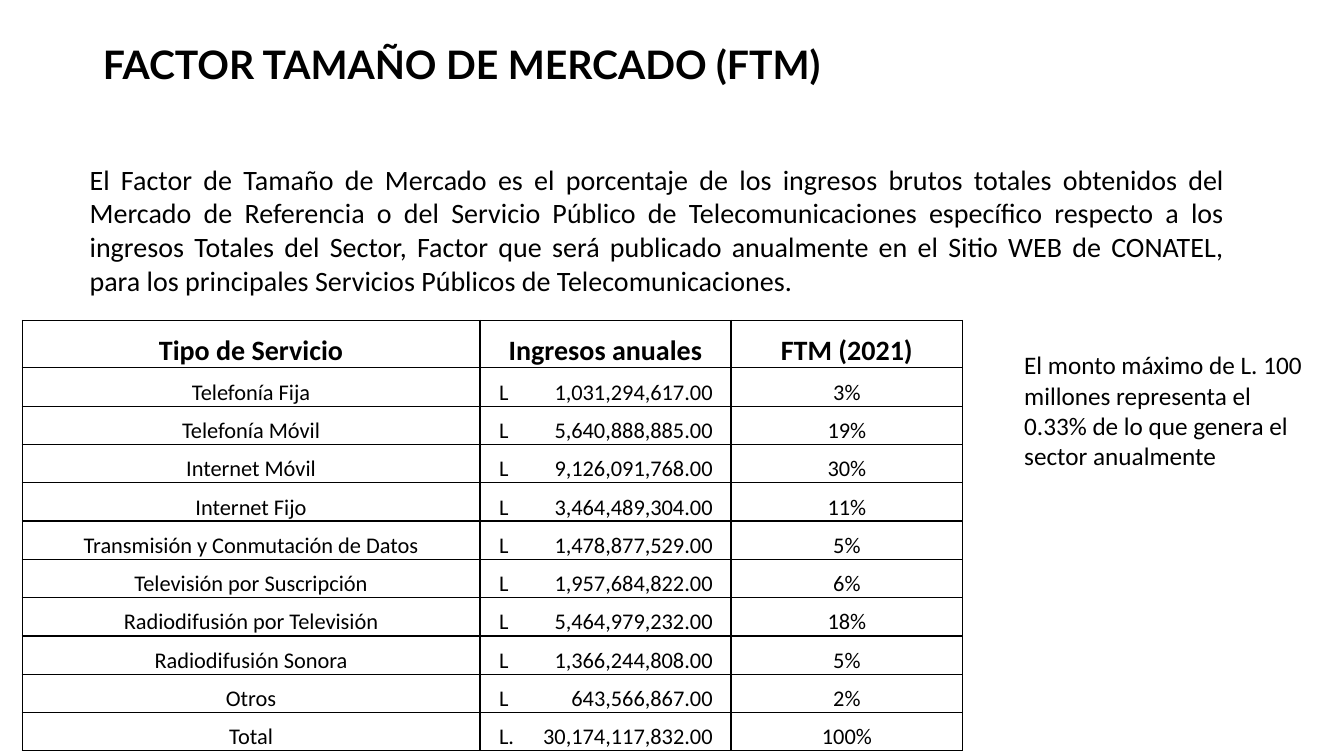
from lxml import etree
from pptx import Presentation
from pptx.dml.color import RGBColor
from pptx.enum import text
from pptx.oxml import ns
from pptx.util import Inches, Pt

BLACK = RGBColor(0, 0, 0)
WHITE = RGBColor(255, 255, 255)
COLUMN_WIDTHS = (4.54, 2.49, 2.3)
HEADER_HEIGHT, ROW_HEIGHT = 0.47, 0.38
AMOUNT_INDENT, AMOUNT_TAB = 0.19, 2.12

TITLE = "FACTOR TAMAÑO DE MERCADO (FTM)"
DEFINITION = (
    "El Factor de Tamaño de Mercado es el porcentaje de los ingresos brutos "
    "totales obtenidos del Mercado de Referencia o del Servicio Público de "
    "Telecomunicaciones específico respecto a los ingresos Totales del Sector, "
    "Factor que será publicado anualmente en el Sitio WEB de CONATEL, para los "
    "principales Servicios Públicos de Telecomunicaciones."
)
MAXIMUM = (
    "El monto máximo de L. 100 millones representa el 0.33% de lo que genera "
    "el sector anualmente"
)
HEADERS = ("Tipo de Servicio", "Ingresos anuales", "FTM (2021)")
SERVICES = (
    ("Telefonía Fija", "L\t1,031,294,617.00", "3%"),
    ("Telefonía Móvil", "L\t5,640,888,885.00", "19%"),
    ("Internet Móvil", "L\t9,126,091,768.00", "30%"),
    ("Internet Fijo", "L\t3,464,489,304.00", "11%"),
    ("Transmisión y Conmutación de Datos", "L\t1,478,877,529.00", "5%"),
    ("Televisión por Suscripción", "L\t1,957,684,822.00", "6%"),
    ("Radiodifusión por Televisión", "L\t5,464,979,232.00", "18%"),
    ("Radiodifusión Sonora", "L\t1,366,244,808.00", "5%"),
    ("Otros", "L\t643,566,867.00", "2%"),
    ("Total", "L.\t30,174,117,832.00", "100%"),
)


def format_paragraph(paragraph, size, align, bold=False, font="Calibri"):
    paragraph.alignment = align
    paragraph.font.name = font
    paragraph.font.size = Pt(size)
    paragraph.font.bold = bold
    paragraph.font.color.rgb = BLACK


def set_title(slide):
    title = slide.shapes.title
    title.left, title.top = Inches(0.92), Inches(0.4)
    title.width, title.height = Inches(11.5), Inches(1.45)
    frame = title.text_frame
    frame.text = TITLE
    frame.auto_size = text.MSO_AUTO_SIZE.NONE
    frame.vertical_anchor = text.MSO_ANCHOR.TOP
    paragraph = frame.paragraphs[0]
    paragraph.line_spacing = 0.9
    format_paragraph(paragraph, 28, text.PP_ALIGN.LEFT, True, "Lato")


def add_text(slide, words, left, top, width, height, size, align):
    frame = slide.shapes.add_textbox(
        Inches(left), Inches(top), Inches(width), Inches(height)
    ).text_frame
    frame.word_wrap = True
    frame.text = words
    format_paragraph(frame.paragraphs[0], size, align)


def add_borders(cell):
    properties = cell._tc.get_or_add_tcPr()
    for position, side in enumerate(("lnL", "lnR", "lnT", "lnB")):
        line = etree.Element(ns.qn(f"a:{side}"), w=str(Pt(1)))
        fill = etree.SubElement(line, ns.qn("a:solidFill"))
        etree.SubElement(fill, ns.qn("a:srgbClr"), val=str(BLACK))
        properties.insert(position, line)


def add_amount_tab(paragraph):
    stops = etree.SubElement(
        paragraph._p.get_or_add_pPr(), ns.qn("a:tabLst")
    )
    etree.SubElement(
        stops, ns.qn("a:tab"), pos=str(Inches(AMOUNT_TAB)), algn="r"
    )


def fill_cell(cell, words, size, bold):
    cell.text = words
    cell.fill.solid()
    cell.fill.fore_color.rgb = WHITE
    cell.vertical_anchor = text.MSO_ANCHOR.BOTTOM
    cell.margin_left = cell.margin_right = 0
    cell.margin_top = cell.margin_bottom = 0
    paragraph = cell.text_frame.paragraphs[0]
    align = text.PP_ALIGN.CENTER
    if "\t" in words:
        cell.margin_left = Inches(AMOUNT_INDENT)
        add_amount_tab(paragraph)
        align = text.PP_ALIGN.LEFT
    format_paragraph(paragraph, size, align, bold)
    add_borders(cell)


def add_income_table(slide):
    rows = (HEADERS, *SERVICES)
    height = HEADER_HEIGHT + ROW_HEIGHT * len(SERVICES)
    income = slide.shapes.add_table(
        len(rows), len(HEADERS), Inches(0.22), Inches(3.18),
        Inches(sum(COLUMN_WIDTHS)), Inches(height),
    ).table
    income.horz_banding = False
    for column, width in zip(income.columns, COLUMN_WIDTHS):
        column.width = Inches(width)
    for r, values in enumerate(rows):
        header = r == 0
        income.rows[r].height = Inches(HEADER_HEIGHT if header else ROW_HEIGHT)
        for c, words in enumerate(values):
            fill_cell(income.cell(r, c), words, 20 if header else 16, header)


def main():
    deck = Presentation()
    deck.slide_width, deck.slide_height = Inches(13.33), Inches(7.5)
    slide = deck.slides.add_slide(deck.slide_layouts[5])
    set_title(slide)
    add_income_table(slide)
    add_text(slide, DEFINITION, 0.79, 1.56, 11.45, 1.45, 20, text.PP_ALIGN.JUSTIFY)
    add_text(slide, MAXIMUM, 10.06, 3.42, 3.06, 1.31, 18, text.PP_ALIGN.LEFT)
    deck.save("out.pptx")


if __name__ == "__main__":
    main()
